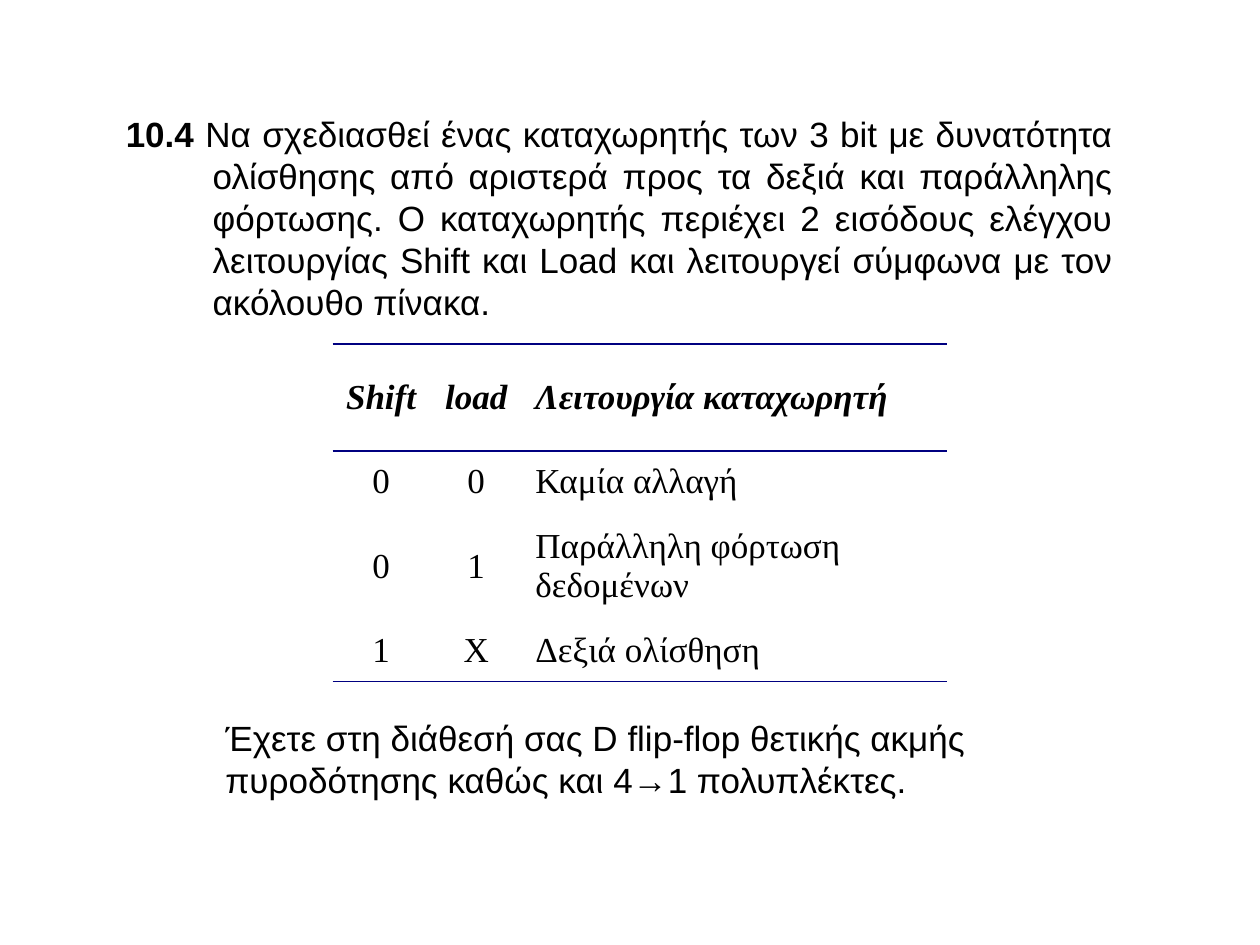
from lxml import etree
from pptx import Presentation
from pptx.dml.color import RGBColor
from pptx.enum import text
from pptx.oxml.ns import qn
from pptx.util import Inches, Pt

BLACK, NAVY = "000000", "000080"
BODY_FONT, TABLE_FONT = "Arial", "Times New Roman"

NUMBER = "10.4 "
EXERCISE = (
    "Να σχεδιασθεί ένας καταχωρητής των 3 bit με δυνατότητα ολίσθησης από "
    "αριστερά προς τα δεξιά και παράλληλης φόρτωσης. Ο καταχωρητής περιέχει "
    "2 εισόδους ελέγχου λειτουργίας Shift και Load και λειτουργεί σύμφωνα με "
    "τον ακόλουθο πίνακα."
)
HINT = (
    "Έχετε στη διάθεσή σας D flip-flop θετικής ακμής πυροδότησης καθώς και "
    "4→1 πολυπλέκτες."
)
FUNCTIONS = [
    ("Shift", "load", "Λειτουργία καταχωρητή"),
    ("0", "0", "Καμία αλλαγή"),
    ("0", "1", "Παράλληλη φόρτωση δεδομένων"),
    ("1", "Χ", "Δεξιά ολίσθηση"),
]
COLUMN_WIDTHS = [0.77, 0.74, 3.37]
ROW_HEIGHTS = [0.85, 0.49, 0.85, 0.49]
HANGING = 0.69


def style(font, name, bold=False, italic=False):
    font.name, font.size = name, Pt(20)
    font.bold, font.italic = bold, italic
    font.color.rgb = RGBColor.from_string(BLACK)


def add_paragraph_box(left, top, width, height):
    """Add a wrapping text box and return its first paragraph."""
    frame = slide.shapes.add_textbox(*map(Inches, (left, top, width, height))).text_frame
    frame.word_wrap = True
    return frame.paragraphs[0]


def set_borders(cell, ruled):
    """Rule the named sides in navy and leave the others without a line."""
    properties = cell._tc.get_or_add_tcPr()
    for position, side in enumerate("LRTB"):
        line = etree.Element(qn(f"a:ln{side}"), w=str(Pt(1)))
        if side in ruled:
            fill = etree.SubElement(line, qn("a:solidFill"))
            etree.SubElement(fill, qn("a:srgbClr"), val=NAVY)
        else:
            etree.SubElement(line, qn("a:noFill"))
        properties.insert(position, line)


prs = Presentation()
prs.slide_width, prs.slide_height = Inches(10), Inches(7.5)
slide = prs.slides.add_slide(prs.slide_layouts[6])

exercise = add_paragraph_box(0.9, 0.84, 8.03, 1.77)
exercise.alignment = text.PP_ALIGN.JUSTIFY
indents = exercise._p.get_or_add_pPr()
indents.set("marL", str(Inches(HANGING)))
indents.set("indent", str(Inches(-HANGING)))
style(exercise.font, BODY_FONT)
for words, bold in ((NUMBER, True), (EXERCISE, False)):
    run = exercise.add_run()
    run.text = words
    style(run.font, BODY_FONT, bold)

table = slide.shapes.add_table(
    len(FUNCTIONS), len(COLUMN_WIDTHS), Inches(2.64), Inches(2.73),
    Inches(sum(COLUMN_WIDTHS)), Inches(sum(ROW_HEIGHTS)),
).table
table.first_row = table.horz_banding = False
for column, width in zip(table.columns, COLUMN_WIDTHS):
    column.width = Inches(width)

ruled_sides = ["TB", "T", "", "B"]
for r, (row, height) in enumerate(zip(table.rows, ROW_HEIGHTS)):
    row.height = Inches(height)
    for c, (cell, words) in enumerate(zip(row.cells, FUNCTIONS[r])):
        cell.text = words
        cell.vertical_anchor = text.MSO_ANCHOR.MIDDLE
        cell.fill.background()
        set_borders(cell, ruled_sides[r])
        paragraph = cell.text_frame.paragraphs[0]
        paragraph.alignment = text.PP_ALIGN.CENTER if c < 2 else text.PP_ALIGN.LEFT
        style(paragraph.font, TABLE_FONT, bold=r == 0, italic=r == 0)

hint = add_paragraph_box(1.69, 5.64, 7.24, 0.77)
hint.text = HINT
style(hint.font, BODY_FONT)

prs.save("out.pptx")
